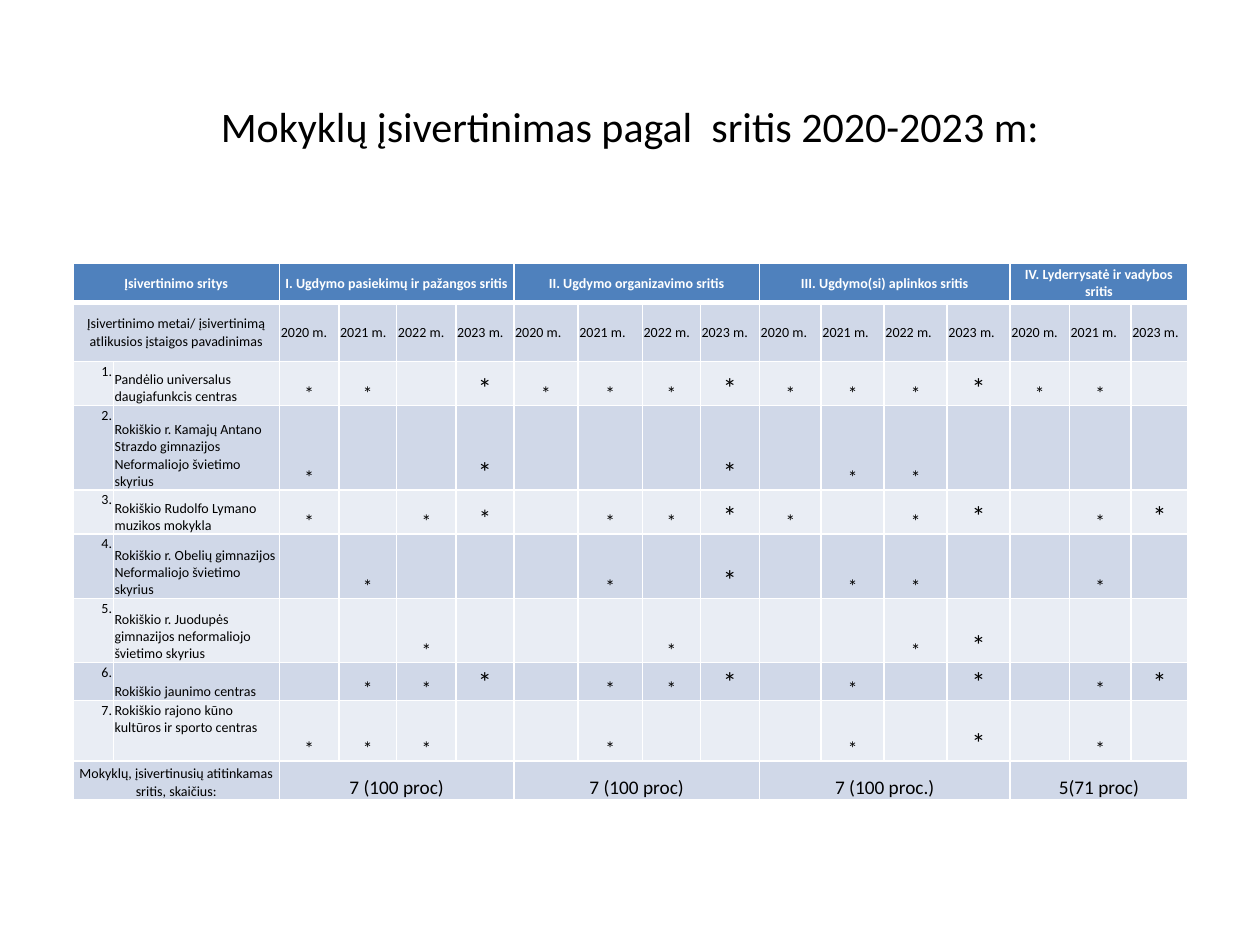
from itertools import cycle
from lxml.etree import SubElement as Sub
from pptx import Presentation
from pptx.dml.color import RGBColor as RGB
from pptx.enum.text import MSO_ANCHOR as Anchor, PP_ALIGN as Align
from pptx.oxml.ns import qn
from pptx.util import Inches, Pt

HUES = {"head": "4F81BD", "band": "D0D8E8", "pale": "E9EDF4",
        "ink": "000000", "white": "FFFFFF"}
WIDTHS = [0.32, 1.32, 0.47, 0.46, 0.47, 0.46, 0.51, 0.51, 0.46, 0.47,
          0.49, 0.5, 0.5, 0.5, 0.47, 0.49, 0.45]
HEIGHTS = [0.31, 0.47, 0.35, 0.67, 0.35, 0.51, 0.51, 0.3, 0.48, 0.31]
SPANS = [2, 4, 4, 4, 3]
AREAS = ["Įsivertinimo sritys", "I. Ugdymo pasiekimų ir pažangos sritis",
         "II. Ugdymo organizavimo sritis", "III. Ugdymo(si) aplinkos sritis",
         "IV. Lyderrysatė ir vadybos sritis"]
YEARS = ["2020", "2021", "2022", "2023"] * 3 + ["2020", "2021", "2023"]
SIZES = {"s": 11, "m": 14, "l": 16}
SCHOOLS = [
    ("Pandėlio universalus daugiafunkcis centras", "ss-l sssl sssl ss-"),
    ("Rokiškio r. Kamajų Antano Strazdo gimnazijos Neformaliojo švietimo skyrius",
     "s--l ---l -ss- ---"),
    ("Rokiškio Rudolfo Lymano muzikos mokykla", "s-sm -ssl s-sl -sl"),
    ("Rokiškio r. Obelių gimnazijos Neformaliojo švietimo skyrius",
     "-s-- -s-l -ss- -s-"),
    ("Rokiškio r. Juodupės gimnazijos neformaliojo švietimo skyrius",
     "--s- --s- --sl ---"),
    ("Rokiškio jaunimo centras", "-ssl -ssl -s-l -sl"),
    ("Rokiškio rajono kūno kultūros ir sporto centras", "sss- -s-- -s-l -s-"),
]
TOTALS = ["Mokyklų, įsivertinusių atitinkamas sritis, skaičius:",
          "7 (100 proc)", "7 (100 proc)", "7 (100 proc.)", "5(71 proc)"]


def write(frame, text, size=8, hue="ink", bold=False, align=Align.CENTER,
          anchor=Anchor.MIDDLE):
    frame.word_wrap = True
    frame.vertical_anchor = anchor
    par = frame.paragraphs[0]
    par.alignment = align
    run = par.add_run()
    run.text = text
    font = run.font
    font.name, font.size, font.bold = "Calibri", Pt(size), bold
    font.color.rgb = RGB.from_string(HUES[hue])


def edge(cell, side, width):
    line = Sub(cell._tc.get_or_add_tcPr(), qn(f"a:ln{side}"), w=str(Pt(width)))
    fill = Sub(line, qn("a:solidFill"))
    Sub(fill, qn("a:srgbClr"), val=HUES["white"])


def dress(cell, row, hue):
    cell.margin_left = cell.margin_right = cell.margin_top = Inches(0.01)
    cell.margin_bottom = 0
    for side in "LRTB":
        thick = (row, side) in ((0, "B"), (1, "T"))
        edge(cell, side, 3 if thick else 1)
    cell.fill.solid()
    cell.fill.fore_color.rgb = RGB.from_string(HUES[hue])
    Sub(cell.text_frame.paragraphs[0]._p, qn("a:endParaRPr"), sz="800")


def put(cell, text, anchor=Anchor.MIDDLE, **look):
    write(cell.text_frame, text, **look)
    cell.vertical_anchor = anchor


def span_row(table, row, texts, looks):
    col = 0
    for text, span, look in zip(texts, SPANS, looks):
        cell = table.cell(row, col)
        cell.merge(table.cell(row, col + span - 1))
        put(cell, text, **look)
        col += span


def add_title(slide, left, top, width, height):
    box = slide.shapes.add_textbox(left, top, width, height)
    write(box.text_frame, "Mokyklų įsivertinimas pagal  sritis 2020-2023 m:", size=24)


def add_grid(slide, left, top, width, height):
    table = slide.shapes.add_table(len(HEIGHTS), len(WIDTHS), left, top,
                                   width, height).table
    for col, wide in zip(table.columns, WIDTHS):
        col.width = Inches(wide)
    for num, (row, high) in enumerate(zip(table.rows, HEIGHTS)):
        row.height = Inches(high)
        hue = "head" if num == 0 else "band" if num % 2 else "pale"
        for cell in row.cells:
            dress(cell, num, hue)

    span_row(table, 0, AREAS, cycle([{"hue": "white", "bold": True}]))

    lead = table.cell(1, 0)
    lead.merge(table.cell(1, 1))
    put(lead, "Įsivertinimo metai/ įsivertinimą atlikusios įstaigos pavadinimas")
    for col, year in enumerate(YEARS, 2):
        put(table.cell(1, col), f"{year} m.", align=Align.LEFT)

    for num, (name, marks) in enumerate(SCHOOLS, 1):
        row = num + 1
        put(table.cell(row, 0), f"{num}.", align=Align.RIGHT, anchor=Anchor.TOP)
        last = num == len(SCHOOLS)
        put(table.cell(row, 1), name, align=Align.LEFT,
            anchor=Anchor.TOP if last else Anchor.BOTTOM)
        for col, mark in enumerate(marks.replace(" ", ""), 2):
            if mark in SIZES:
                put(table.cell(row, col), "*", size=SIZES[mark], anchor=Anchor.BOTTOM)

    low = {"anchor": Anchor.BOTTOM}
    span_row(table, len(HEIGHTS) - 1, TOTALS, [low] + [{**low, "size": 11}] * 4)


def main():
    deck = Presentation()
    deck.slide_width, deck.slide_height = Inches(10), Inches(7.5)
    slide = deck.slides.add_slide(deck.slide_layouts[6])
    add_title(slide, Inches(0.5), Inches(0.44), Inches(9), Inches(1.11))
    add_grid(slide, Inches(0.58), Inches(2.09), Inches(8.85), Inches(4.27))
    deck.save("out.pptx")


if __name__ == "__main__":
    main()
